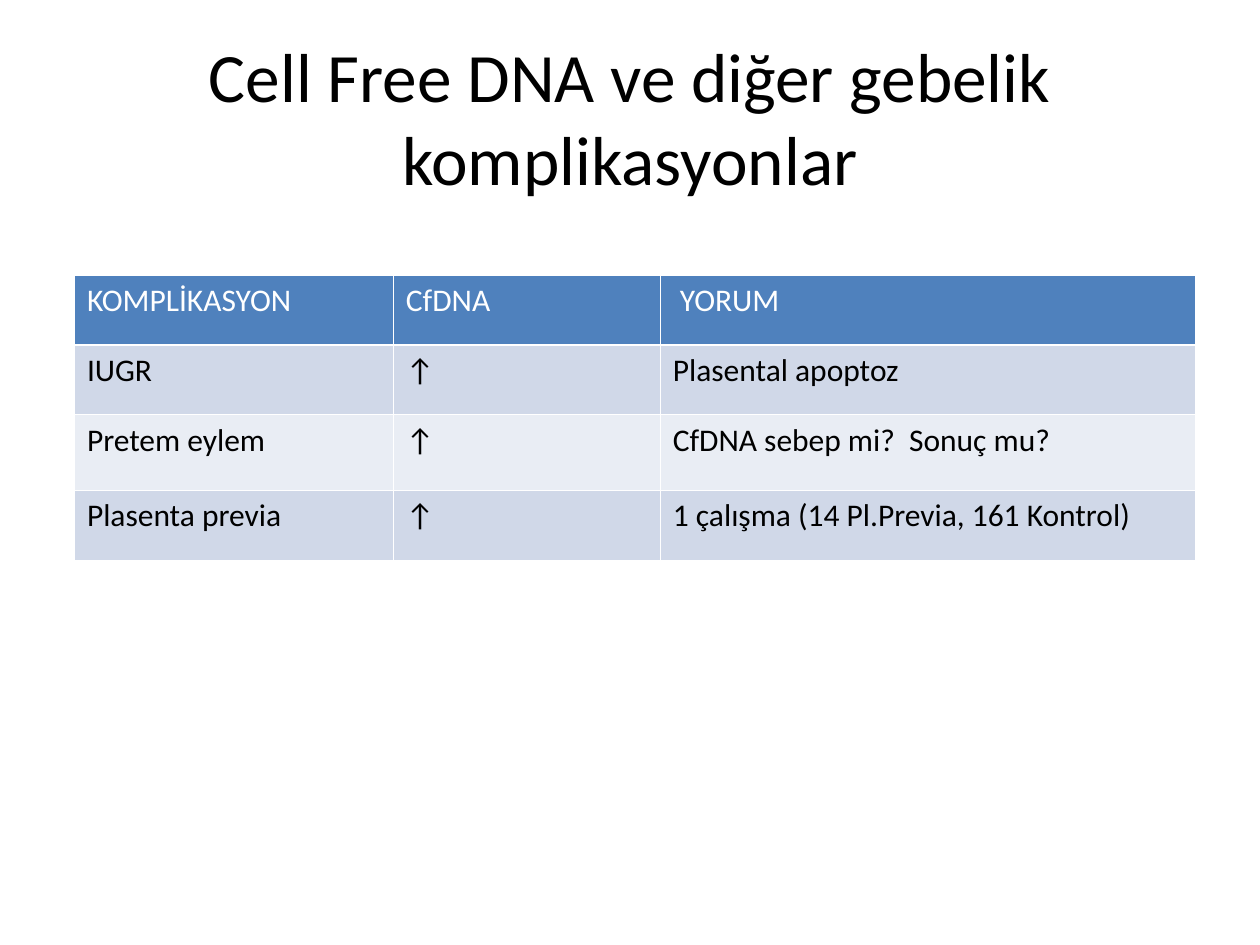
from pptx import Presentation
from pptx.dml.color import RGBColor
from pptx.enum.text import MSO_ANCHOR, PP_ALIGN
from pptx.util import Cm, Pt

MIDDLE = MSO_ANCHOR.MIDDLE
CENTER = PP_ALIGN.CENTER
BLACK = RGBColor(0x00, 0x00, 0x00)
WHITE = RGBColor(0xFF, 0xFF, 0xFF)
BLUE = RGBColor(0x4F, 0x81, 0xBD)
BANDS = (RGBColor(0xE9, 0xED, 0xF4), RGBColor(0xD0, 0xD8, 0xE8))
FONT = "Calibri"

TITLE = "Cell Free DNA ve diğer gebelik komplikasyonlar"
ROWS = (
    ("KOMPLİKASYON", "CfDNA", " YORUM"),
    ("IUGR", "↑", "Plasental apoptoz"),
    ("Pretem eylem", "↑", "CfDNA sebep mi?  Sonuç mu?"),
    ("Plasenta previa", "↑", "1 çalışma (14 Pl.Previa, 161 Kontrol)"),
)
WIDTHS = (6.43, 5.38, 10.8)
HEIGHTS = (1.41, 1.41, 1.53, 1.41)


def write(frame, text, size, color):
    frame.text = text
    for run in frame.paragraphs[0].runs:
        run.font.name = FONT
        run.font.size = Pt(size)
        run.font.bold = False
        run.font.color.rgb = color


def add_title(slide, left, top, width, height):
    box = slide.shapes.add_textbox(Cm(left), Cm(top), Cm(width), Cm(height))
    frame = box.text_frame
    frame.word_wrap = True
    frame.vertical_anchor = MIDDLE
    write(frame, TITLE, 39.6, BLACK)
    frame.paragraphs[0].alignment = CENTER


def add_grid(slide, left, top):
    table = slide.shapes.add_table(
        len(ROWS), len(WIDTHS), Cm(left), Cm(top),
        Cm(sum(WIDTHS)), Cm(sum(HEIGHTS))).table
    for column, width in zip(table.columns, WIDTHS):
        column.width = Cm(width)
    for row, height in zip(table.rows, HEIGHTS):
        row.height = Cm(height)
    for r, texts in enumerate(ROWS):
        fill, color = (BANDS[r % 2], BLACK) if r else (BLUE, WHITE)
        for c, text in enumerate(texts):
            cell = table.cell(r, c)
            cell.fill.solid()
            cell.fill.fore_color.rgb = fill
            write(cell.text_frame, text, 18, color)


def main():
    deck = Presentation()
    deck.slide_width = Cm(25.4)
    deck.slide_height = Cm(19.05)
    slide = deck.slides.add_slide(deck.slide_layouts[6])
    add_title(slide, 1.27, 0.76, 22.86, 3.18)
    add_grid(slide, 1.5, 5.54)
    deck.save("out.pptx")


if __name__ == "__main__":
    main()
